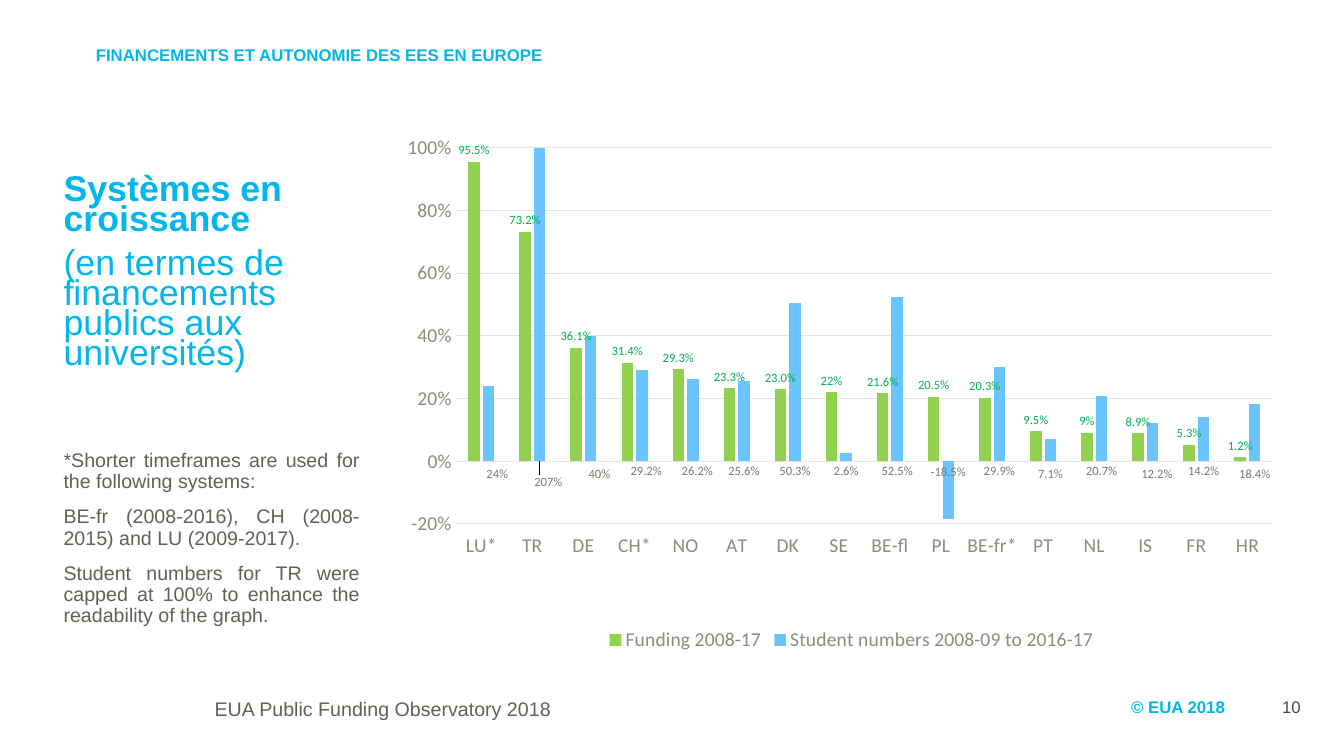
from copy import deepcopy

from lxml import etree
from pptx import Presentation
from pptx import util as u
from pptx.chart.data import CategoryChartData
from pptx.dml.color import RGBColor
from pptx.enum import chart as ch
from pptx.enum import text as t
from pptx.oxml import parse_xml
from pptx.oxml.ns import nsdecls, qn

CYAN, BROWN, DARK = "00B6ED", "645F57", "494842"
AXIS_GREY, GRID_GREY = "8C8B80", "E5E4E2"

SYSTEMS = [
    ("LU*", 0.955, 0.24), ("TR", 0.732, 2.07), ("DE", 0.361, 0.4),
    ("CH*", 0.314, 0.292), ("NO", 0.293, 0.262), ("AT", 0.233, 0.256),
    ("DK", 0.23, 0.503), ("SE", 0.22, 0.026), ("BE-fl", 0.216, 0.525),
    ("PL", 0.205, -0.185), ("BE-fr*", 0.203, 0.299), ("PT", 0.095, 0.071),
    ("NL", 0.09, 0.207), ("IS", 0.089, 0.122), ("FR", 0.053, 0.142),
    ("HR", 0.012, 0.184),
]
WHOLE_FUNDING = ("SE", "NL")
WHOLE_STUDENTS = ("LU*", "TR", "DE")
LABEL_SHIFTS = {
    "LU*": (0.01, 0.045), "TR": (0.01, 0.06), "DE": (0.01, 0.045),
    "CH*": (0.005, 0.04), "NO": (0.005, 0.04), "PL": (0, 0),
    "PT": (0, 0.045), "IS": (0.005, 0.045), "HR": (0, 0.045),
}


def rgb(value):
    return RGBColor.from_string(value)


def style_font(font, size, color, name="Arial", bold=False):
    font.size = u.Pt(size)
    font.name = name
    font.bold = bold
    font.color.rgb = rgb(color)


def write(shape, place, paragraphs, size, color, bold=False, spacing=None,
          align=t.PP_ALIGN.LEFT, anchor=t.MSO_ANCHOR.TOP):
    shape.left, shape.top, shape.width, shape.height = map(u.Inches, place)
    frame = shape.text_frame
    frame.text = "\n".join(paragraphs)
    frame.word_wrap = True
    frame.auto_size = t.MSO_AUTO_SIZE.NONE
    frame.vertical_anchor = anchor
    for index, paragraph in enumerate(frame.paragraphs):
        paragraph.alignment = align
        paragraph.line_spacing = spacing
        paragraph.space_before = u.Pt(10 if index else 0)
        for run in paragraph.runs:
            style_font(run.font, size, color, bold=bold)
    return frame


def add_text(slide, place, line, size, color, **options):
    box = slide.shapes.add_textbox(*map(u.Inches, place))
    write(box, place, [line], size, color, **options)


def set_plot_area(chart, x, y, w, h):
    plot_area = chart._chartSpace.chart.plotArea
    for layout in plot_area.findall(qn("c:layout")):
        plot_area.remove(layout)
    plot_area.insert(0, parse_xml(
        f'<c:layout {nsdecls("c")}><c:manualLayout><c:layoutTarget val="inner"/>'
        '<c:xMode val="edge"/><c:yMode val="edge"/>'
        f'<c:x val="{x}"/><c:y val="{y}"/><c:w val="{w}"/><c:h val="{h}"/>'
        '</c:manualLayout></c:layout>'))


def label_series(series, color, position):
    labels = series.data_labels
    labels.show_value = True
    labels.number_format = "0.0%"
    labels.number_format_is_linked = False
    labels.position = position
    style_font(labels.font, 9, color, "Calibri")
    return labels._element


def adjust_labels(labels, adjustments):
    shared = [part for part in labels if part.tag != qn("c:showLeaderLines")]
    for order, (index, shift, number_format) in enumerate(adjustments):
        label = parse_xml(f'<c:dLbl {nsdecls("c")}><c:idx val="{index}"/></c:dLbl>')
        if any(shift):
            layout = etree.SubElement(label, qn("c:layout"))
            manual = etree.SubElement(layout, qn("c:manualLayout"))
            for axis, offset in zip("xy", shift):
                etree.SubElement(manual, qn(f"c:{axis}")).set("val", str(offset))
        label.extend(deepcopy(part) for part in shared)
        label.find(qn("c:numFmt")).set("formatCode", number_format)
        labels.insert(order, label)


def style_axis(axis):
    axis.major_tick_mark = ch.XL_TICK_MARK.NONE
    axis.minor_tick_mark = ch.XL_TICK_MARK.NONE
    style_font(axis.tick_labels.font, 14, AXIS_GREY, "Calibri")


def style_line(line):
    line.color.rgb = rgb(GRID_GREY)
    line.width = u.Pt(0.75)


def add_growth_chart(slide):
    names, funding_values, student_values = zip(*SYSTEMS)
    data = CategoryChartData(number_format="0.0%")
    data.categories = names
    data.add_series("Funding 2008-17", funding_values)
    data.add_series("Student numbers 2008-09 to 2016-17", student_values)
    chart = slide.shapes.add_chart(
        ch.XL_CHART_TYPE.COLUMN_CLUSTERED,
        *map(u.Inches, (4.04, 1.16, 8.77, 5.35)), data).chart
    style_font(chart.font, 10, DARK, "Calibri")
    chart.has_title = False
    chart.has_legend = True
    chart.legend.position = ch.XL_LEGEND_POSITION.BOTTOM
    chart.legend.include_in_layout = False
    style_font(chart.legend.font, 14, AXIS_GREY, "Calibri")
    set_plot_area(chart, 0.05, 0.057, 0.929, 0.698)

    systems, growth = chart.category_axis, chart.value_axis
    style_axis(systems)
    systems.tick_label_position = ch.XL_TICK_LABEL_POSITION.LOW
    style_line(systems.format.line)
    style_axis(growth)
    growth.minimum_scale, growth.maximum_scale, growth.major_unit = -0.2, 1, 0.2
    growth.tick_labels.number_format = "0%"
    growth.tick_labels.number_format_is_linked = False
    growth.format.line.fill.background()
    style_line(growth.major_gridlines.format.line)

    plot = chart.plots[0]
    plot.gap_width, plot.overlap = 219, -27
    plot.vary_by_categories = False
    funding, students = plot.series
    for series, color in ((funding, "92D050"), (students, "69C4FF")):
        series.format.fill.solid()
        series.format.fill.fore_color.rgb = rgb(color)
        series.invert_if_negative = False
    funding_labels = label_series(funding, "00B050", ch.XL_LABEL_POSITION.OUTSIDE_END)
    adjust_labels(funding_labels,
                  [(names.index(name), (0, 0), "0%") for name in WHOLE_FUNDING])
    student_labels = label_series(students, "7A786E", ch.XL_LABEL_POSITION.INSIDE_BASE)
    adjust_labels(student_labels, [
        (index, LABEL_SHIFTS.get(name, (0, 0.04)),
         "0%" if name in WHOLE_STUDENTS else "0.0%")
        for index, name in enumerate(names)])


def main():
    deck = Presentation()
    deck.slide_width, deck.slide_height = u.Inches(13.33), u.Inches(7.5)
    slide = deck.slides.add_slide(deck.slide_layouts[4])
    heading, section, left_content, notes, right_content = slide.placeholders
    for unused in (left_content, right_content):
        unused._element.getparent().remove(unused._element)

    middle = t.MSO_ANCHOR.MIDDLE
    write(section, (0.85, 0.39, 5.64, 0.31),
          ["FINANCEMENTS ET AUTONOMIE DES EES EN EUROPE"], 12, CYAN,
          bold=True, spacing=0.9, anchor=t.MSO_ANCHOR.BOTTOM)
    topic = write(heading, (0.53, 1.71, 3.26, 2.24),
                  ["Systèmes en croissance",
                   "(en termes de financements publics aux universités)"],
                  25.5, CYAN, spacing=0.7)
    topic.paragraphs[0].runs[0].font.bold = True
    write(notes, (0.53, 4.42, 3.14, 2.24),
          ["*Shorter timeframes are used for the following systems:",
           "BE-fr (2008-2016), CH (2008-2015) and LU (2009-2017).",
           "Student numbers for TR were capped at 100% to enhance the "
           "readability of the graph."],
          14, BROWN, spacing=0.9, align=t.PP_ALIGN.JUSTIFY)
    add_growth_chart(slide)
    add_text(slide, (2.03, 6.89, 4.05, 0.4), "EUA Public Funding Observatory 2018",
             14, BROWN, spacing=0.9)
    add_text(slide, (11.12, 6.81, 1.13, 0.4), "© EUA 2018", 12, CYAN,
             bold=True, anchor=middle)
    add_text(slide, (12.4, 6.81, 0.6, 0.4), "10", 12, DARK,
             align=t.PP_ALIGN.RIGHT, anchor=middle)
    deck.save("out.pptx")


if __name__ == "__main__":
    main()
